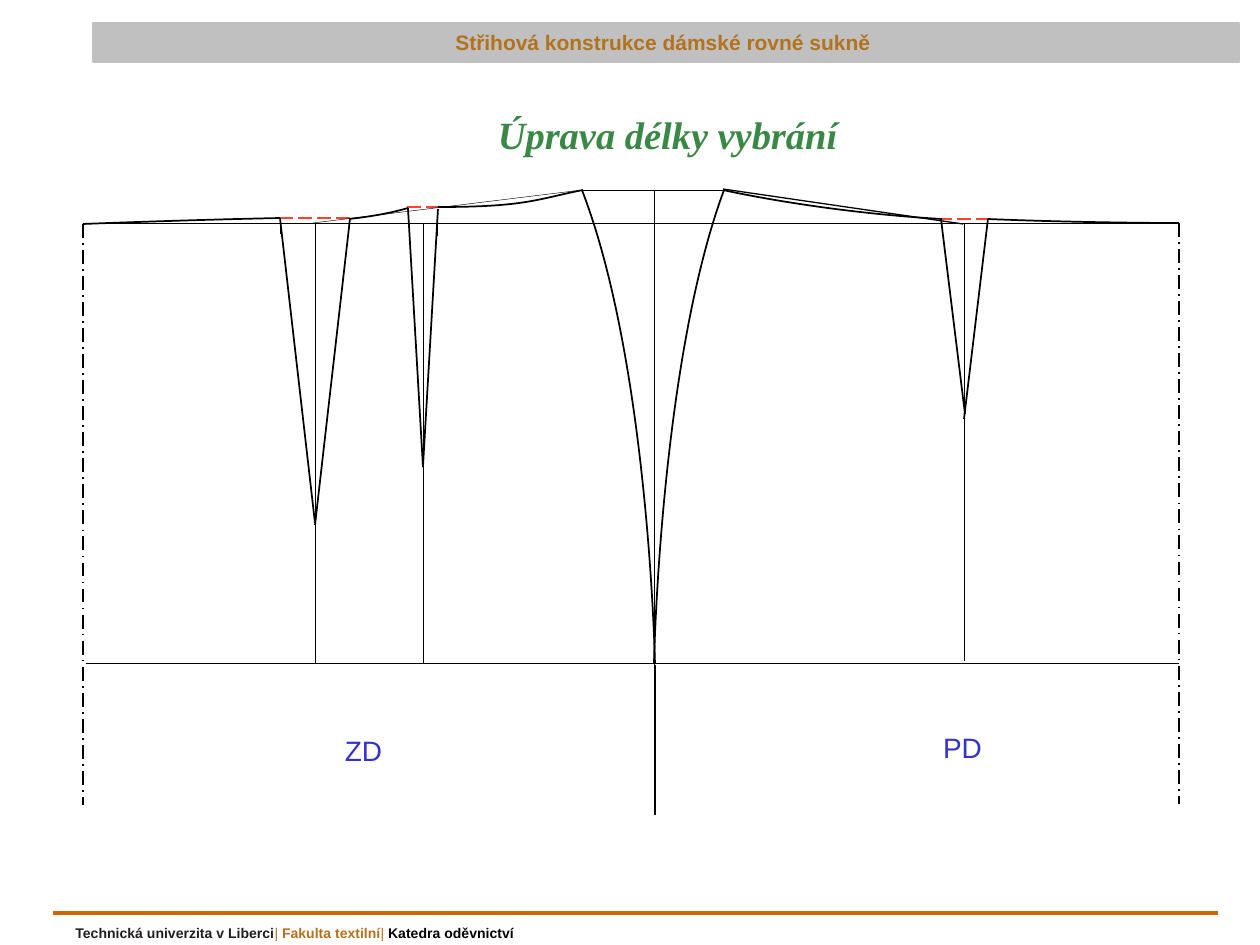
from lxml import etree
from pptx import Presentation
from pptx.dml.color import RGBColor
from pptx.enum.dml import MSO_LINE
from pptx.enum.shapes import MSO_CONNECTOR, MSO_SHAPE
from pptx.enum.text import MSO_ANCHOR, PP_ALIGN
from pptx.oxml.ns import qn
from pptx.util import Inches, Pt

STRAIGHT = MSO_CONNECTOR.STRAIGHT
RECTANGLE = MSO_SHAPE.RECTANGLE
LONG_DASH = MSO_LINE.LONG_DASH
LONG_DASH_DOT = MSO_LINE.LONG_DASH_DOT
MIDDLE = MSO_ANCHOR.MIDDLE
LEFT, CENTER = PP_ALIGN.LEFT, PP_ALIGN.CENTER

BLACK = RGBColor(0x00, 0x00, 0x00)
INK = RGBColor(0x22, 0x1E, 0x1F)
GREY = RGBColor(0xC0, 0xC0, 0xC0)
OCHRE = RGBColor(0xB3, 0x72, 0x1C)
ORANGE = RGBColor(0xCC, 0x66, 0x00)
RED = RGBColor(0xFD, 0x41, 0x33)
GREEN = RGBColor(0x3A, 0x88, 0x45)
BLUE = RGBColor(0x33, 0x33, 0xCC)

HAIRLINE, THIN, OUTLINE = 0.25, 0.5, 1
WAIST, HIP = 223, 663
BACK_EDGE, SIDE, FRONT_EDGE = 83, 654, 1179

# Each line is x1, y1, x2, y2.
DART_TOPS = [(350, 218, 277, 218), (440, 207, 407, 207), (990, 219, 941, 219)]
GUIDES = [
    (86, WAIST, FRONT_EDGE, WAIST),
    (86, HIP, FRONT_EDGE, HIP),
    (315, WAIST, 315, HIP),
    (423, WAIST, 423, HIP),
    (964, WAIST, 964, HIP - 2),
    (SIDE, 190, SIDE, HIP + 6),
    (582, 190, 313, WAIST),
    (582, 190, 723, 190),
]
TICKS = [(280, 224, 280, 234), (409, 224, 409, 234), (437, 224, 437, 236)]
CENTRE_EDGES = [(BACK_EDGE, 224, BACK_EDGE, 805),
                (FRONT_EDGE, WAIST, FRONT_EDGE, 804)]
DART_SIDES = [
    (280, 218, 315, 523), (315, 525, 350, 219),
    (408, 208, 423, 467), (423, 466, 438, 209),
    (941, 219, 965, 414), (964, 419, 988, 219),
]
SIDE_SEAM = (655, 665, 655, 815)
FRONT_WAIST_CHORD = (723, 189, 963, 224)

# Each curve is start, two control points, end.
CURVES = [
    [(942, 219), (819, 212), (723, 190), (723, 190)],
    [(582, 190), (649, 363), (655, 663), (655, 663)],
    [(724, 190), (660, 363), (654, 663), (654, 663)],
    [(988, 219), (1086, 223), (1179, 223), (1179, 223)],
    [(583, 190), (537, 199), (527, 207), (438, 207)],
    [(280, 218), (183, 220), (83, 224), (83, 224)],
    [(349, 219), (387, 215), (408, 208), (408, 208)],
]


def px(length):
    return round(length * 914400 / 126)


def add_line(slide, ends, width, color=BLACK, dash=None):
    line = slide.shapes.add_connector(STRAIGHT, *map(px, ends))
    line.line.color.rgb = color
    line.line.width = Pt(width)
    if dash is not None:
        line.line.dash_style = dash
    etree.SubElement(line._element.spPr, qn("a:effectLst"))


def add_curve(slide, points):
    """Draw a cubic Bézier: its polygon is built, then turned into one curve."""
    start, *rest = [(px(x), px(y)) for x, y in points]
    builder = slide.shapes.build_freeform(*start)
    builder.add_line_segments(rest, close=False)
    curve = builder.convert_to_shape()
    curve.shadow.inherit = False
    curve.fill.background()
    curve.line.color.rgb = BLACK
    curve.line.width = Pt(OUTLINE)

    outline = next(curve._element.iter(qn("a:path")))
    bezier = etree.SubElement(outline, qn("a:cubicBezTo"))
    for segment in outline.findall(qn("a:lnTo")):
        bezier.append(segment[0])
        outline.remove(segment)


def write(shape, runs, size, font="Arial", align=CENTER, italic=False):
    """Fill a shape with one paragraph of (text, color, bold) runs."""
    frame = shape.text_frame
    frame.word_wrap = True
    frame.vertical_anchor = MIDDLE
    paragraph = frame.paragraphs[0]
    paragraph.alignment = align
    for text, color, bold in runs:
        run = paragraph.add_run()
        run.text = text
        run.font.name = font
        run.font.size = Pt(size)
        run.font.color.rgb = color
        run.font.bold = bold
        run.font.italic = italic


def add_text(slide, box, runs, size, **style):
    write(slide.shapes.add_textbox(*map(px, box)), runs, size, **style)


def add_header(slide):
    band = slide.shapes.add_shape(RECTANGLE, *map(px, (93, 23, 1146, 39)))
    band.shadow.inherit = False
    band.fill.solid()
    band.fill.fore_color.rgb = GREY
    band.line.color.rgb = GREY
    band.line.width = Pt(0.75)
    write(band, [("Střihová konstrukce dámské rovné sukně ", OCHRE, True)], 12)


def add_footer(slide):
    add_line(slide, (53, 913, 1218, 913), 2.25, ORANGE)
    add_text(slide, (63, 918, 1155, 29), [
        ("Technická univerzita v Liberci", INK, True),
        ("| ", OCHRE, False),
        ("Fakulta textilní", OCHRE, True),
        ("| ", OCHRE, False),
        ("Katedra oděvnictví", BLACK, True),
    ], 8, align=LEFT)


def add_pattern(slide):
    for ends in DART_TOPS:
        add_line(slide, ends, OUTLINE, RED, LONG_DASH)
    for ends in GUIDES:
        add_line(slide, ends, HAIRLINE)
    for ends in TICKS:
        add_line(slide, ends, THIN)
    for ends in CENTRE_EDGES:
        add_line(slide, ends, OUTLINE, dash=LONG_DASH_DOT)
    for ends in DART_SIDES + [SIDE_SEAM]:
        add_line(slide, ends, OUTLINE)
    add_line(slide, FRONT_WAIST_CHORD, 0.75)
    for points in CURVES:
        add_curve(slide, points)


def main():
    deck = Presentation()
    deck.slide_width, deck.slide_height = Inches(10), Inches(7.5)
    slide = deck.slides.add_slide(deck.slide_layouts[6])
    add_footer(slide)
    add_header(slide)
    add_text(slide, (256, 105, 823, 59), [("Úprava délky vybrání", GREEN, True)],
             22, font="Times New Roman", italic=True)
    add_pattern(slide)
    add_text(slide, (306, 727, 115, 47), [("ZD", BLUE, False)], 16)
    add_text(slide, (906, 724, 113, 47), [("PD", BLUE, False)], 16)
    deck.save("out.pptx")


if __name__ == "__main__":
    main()
